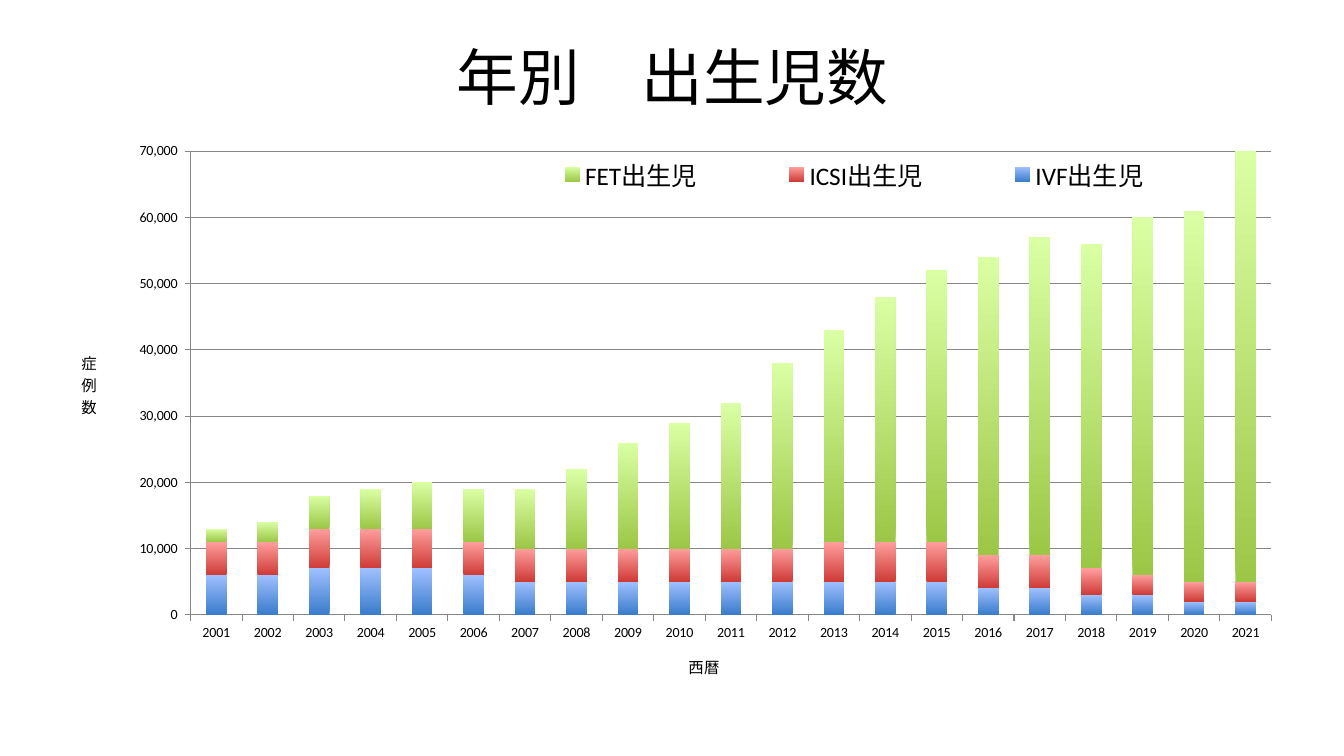
from lxml.etree import SubElement
from pptx import Presentation
from pptx.chart.data import CategoryChartData
from pptx.dml.color import RGBColor
from pptx.enum.chart import XL_CHART_TYPE, XL_LEGEND_POSITION, XL_TICK_MARK
from pptx.enum.text import MSO_ANCHOR, PP_ALIGN
from pptx.oxml.ns import qn
from pptx.util import Inches, Pt

BLACK = RGBColor(0x00, 0x00, 0x00)
GRAY = RGBColor(0x86, 0x86, 0x86)
BLUE, LIGHT_BLUE = RGBColor(0x3A, 0x7C, 0xCB), RGBColor(0x9F, 0xC0, 0xFF)
RED, LIGHT_RED = RGBColor(0xCE, 0x3B, 0x37), RGBColor(0xFF, 0x9F, 0x9D)
GREEN, LIGHT_GREEN = RGBColor(0x9C, 0xC7, 0x46), RGBColor(0xDA, 0xFF, 0xA4)
LATIN_FONT = "Calibri"
JAPANESE_FONT = "Noto Sans CJK JP"
CHART_WIDTH = Inches(12.44)
CHART_HEIGHT = Inches(5.53)

YEARS = [str(year) for year in range(2001, 2022)]
BIRTHS = [
    ("IVF出生児", BLUE, LIGHT_BLUE,
     [6000, 6000, 7000, 7000, 7000, 6000, 5000, 5000, 5000, 5000, 5000,
      5000, 5000, 5000, 5000, 4000, 4000, 3000, 3000, 2000, 2000]),
    ("ICSI出生児", RED, LIGHT_RED,
     [5000, 5000, 6000, 6000, 6000, 5000, 5000, 5000, 5000, 5000, 5000,
      5000, 6000, 6000, 6000, 5000, 5000, 4000, 3000, 3000, 3000]),
    ("FET出生児", GREEN, LIGHT_GREEN,
     [2000, 3000, 5000, 6000, 7000, 8000, 9000, 12000, 16000, 19000, 22000,
      28000, 32000, 37000, 41000, 45000, 48000, 49000, 54000, 56000, 65000]),
]


def style_font(font, size):
    font.size = Pt(size)
    font.bold = False
    font.name = LATIN_FONT
    font.color.rgb = BLACK


def add_run(paragraph, text, size, font_name):
    run = paragraph.add_run()
    run.text = text
    style_font(run.font, size)
    run.font.name = font_name
    east_asian = SubElement(run.font._element, qn("a:ea"))
    east_asian.set("typeface", JAPANESE_FONT)


def add_title(slide, text):
    box = slide.shapes.add_textbox(Inches(0.67), Inches(0.3), Inches(12), Inches(0.91))
    frame = box.text_frame
    frame.word_wrap = True
    frame.vertical_anchor = MSO_ANCHOR.MIDDLE
    paragraph = frame.paragraphs[0]
    paragraph.alignment = PP_ALIGN.CENTER
    add_run(paragraph, text, 44, JAPANESE_FONT)


def set_layout(element, predecessor, left, top, width=None, height=None):
    for layout in element.findall(qn("c:layout")):
        element.remove(layout)
    layout = SubElement(element, qn("c:layout"))
    manual = SubElement(layout, qn("c:manualLayout"))
    if predecessor is None:
        SubElement(manual, qn("c:layoutTarget")).set("val", "inner")
        element.insert(0, layout)
    else:
        element.find(qn(predecessor)).addnext(layout)
    for name in ("x", "y"):
        SubElement(manual, qn(f"c:{name}Mode")).set("val", "edge")
    lengths = [("x", left, CHART_WIDTH), ("y", top, CHART_HEIGHT),
               ("w", width, CHART_WIDTH), ("h", height, CHART_HEIGHT)]
    for name, length, whole in lengths:
        if length is not None:
            SubElement(manual, qn(f"c:{name}")).set("val", str(length / whole))


def style_axis(axis, title, left, top):
    axis.major_tick_mark = XL_TICK_MARK.OUTSIDE
    axis.minor_tick_mark = XL_TICK_MARK.NONE
    axis.format.line.color.rgb = GRAY
    axis.format.line.width = Pt(0.75)
    style_font(axis.tick_labels.font, 10)
    frame = axis.axis_title.text_frame
    add_run(frame.paragraphs[0], title, 11, LATIN_FONT)
    set_layout(axis.axis_title._element, "c:tx", left, top)
    return frame


def style_value_axis(axis):
    frame = style_axis(axis, "症例数", Inches(0.34), Inches(2.14))
    body = frame._txBody.find(qn("a:bodyPr"))
    body.set("rot", "0")
    body.set("vert", "wordArtVertRtl")
    axis.minimum_scale = 0
    axis.maximum_scale = 70000
    axis.major_unit = 10000
    axis.tick_labels.number_format = r"#,##0_);[Red]\(#,##0\)"
    axis.tick_labels.number_format_is_linked = False
    axis.has_major_gridlines = True
    axis.major_gridlines.format.line.color.rgb = GRAY
    axis.major_gridlines.format.line.width = Pt(0.75)


def style_series(series, bottom_color, top_color):
    fill = series.format.fill
    fill.gradient()
    fill.gradient_angle = 90
    for stop, color, position in zip(fill.gradient_stops, (bottom_color, top_color), (0, 1)):
        stop.color.rgb = color
        stop.position = position
    series.format.line.fill.background()
    series.invert_if_negative = False


def style_legend(chart):
    chart.has_legend = True
    legend = chart.legend
    legend.position = XL_LEGEND_POSITION.RIGHT
    legend.include_in_layout = True
    style_font(legend.font, 18)
    set_layout(legend._element, "c:legendPos",
               Inches(4.33), Inches(0.21), Inches(7.4), Inches(0.44))


def add_births_chart(slide):
    data = CategoryChartData(number_format="#,##0")
    data.categories = YEARS
    for name, _, _, values in BIRTHS:
        data.add_series(name, values)
    chart = slide.shapes.add_chart(
        XL_CHART_TYPE.COLUMN_STACKED,
        Inches(0.44), Inches(1.3), CHART_WIDTH, CHART_HEIGHT, data,
    ).chart
    chart.has_title = False
    style_font(chart.font, 10)
    plot = chart.plots[0]
    plot.gap_width = 150
    plot.overlap = 100
    plot.vary_by_categories = False
    for series, (_, bottom_color, top_color, _) in zip(plot.series, BIRTHS):
        style_series(series, bottom_color, top_color)
    style_axis(chart.category_axis, "西暦", Inches(6.36), Inches(5.16))
    style_value_axis(chart.value_axis)
    style_legend(chart)
    plot_area = chart._chartSpace.chart.plotArea
    set_layout(plot_area, None, Inches(1.45), Inches(0.2), Inches(10.72), Inches(4.6))


def main():
    presentation = Presentation()
    presentation.slide_width = Inches(13.33)
    presentation.slide_height = Inches(7.5)
    slide = presentation.slides.add_slide(presentation.slide_layouts[6])
    add_title(slide, "年別　出生児数")
    add_births_chart(slide)
    presentation.save("out.pptx")


if __name__ == "__main__":
    main()
